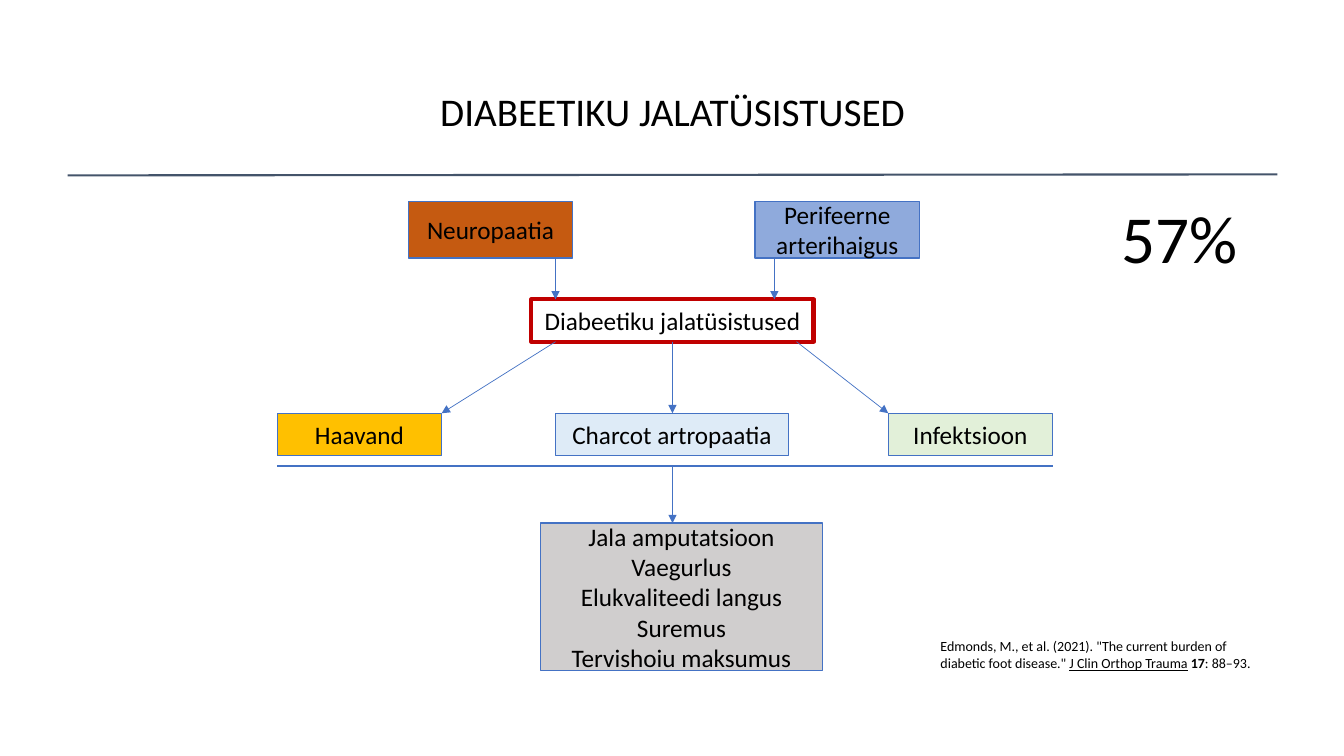
"""Build the slide on diabetic foot complications as a flow chart."""
from dataclasses import dataclass

from lxml.etree import SubElement
from pptx import Presentation
from pptx.dml.color import RGBColor
from pptx.enum.shapes import MSO_CONNECTOR as Connector, MSO_SHAPE as Preset
from pptx.enum.text import MSO_ANCHOR as Anchor, PP_ALIGN as Align
from pptx.oxml.ns import qn
from pptx.slide import Slide
from pptx.text.text import Font, TextFrame
from pptx.util import Inches, Pt

FONT = "Calibri"
COLORS = {
    "text": "000000",
    "rule": "44546A",
    "blue": "4472C4",
    "red": "C00000",
    "orange": "C55A11",
    "periwinkle": "8FAADC",
    "white": "FFFFFF",
    "green": "E2F0D9",
    "pale blue": "DEEBF7",
    "amber": "FFC000",
    "gray": "D0CECE",
}

CAUSE_TOP, CAUSE_BOTTOM = 2, 2.56
CENTER_TOP, CENTER_BOTTOM = 2.97, 3.39
EFFECT_TOP, EFFECT_BOTTOM = 4.1, 4.52
BAR_Y, OUTCOME_TOP = 4.62, 5.19
LEFT, RIGHT, MIDDLE = 2.75, 10.44, 6.67
SMALL, WIDE = 1.63, 2.8


@dataclass
class Box:
    text: str
    left: float
    top: float
    width: float
    bottom: float
    fill: str
    border: str = "blue"
    border_width: float = 1


@dataclass
class Line:
    start: tuple[float, float]
    end: tuple[float, float]
    color: str = "blue"
    width: float = 0.5
    arrow: bool = True


@dataclass
class Label:
    text: str
    left: float
    top: float
    width: float
    height: float
    size: float
    align: Align = Align.LEFT
    anchor: Anchor = Anchor.TOP
    spacing: float = 1


@dataclass
class CitationPart:
    text: str
    underline: bool = False
    bold: bool = False


BOXES = [
    Box("Neuropaatia", 4.05, CAUSE_TOP, SMALL, CAUSE_BOTTOM, "orange"),
    Box("Perifeerne arterihaigus", 7.49, CAUSE_TOP, SMALL, CAUSE_BOTTOM, "periwinkle"),
    Box("Diabeetiku jalatüsistused", 5.27, CENTER_TOP, WIDE, CENTER_BOTTOM, "white", "red", 3),
    Box("Haavand", LEFT, EFFECT_TOP, SMALL, EFFECT_BOTTOM, "amber"),
    Box("Charcot artropaatia", 5.51, EFFECT_TOP, 2.31, EFFECT_BOTTOM, "pale blue"),
    Box("Infektsioon", RIGHT - SMALL, EFFECT_TOP, SMALL, EFFECT_BOTTOM, "green"),
    Box(
        "Jala amputatsioon\nVaegurlus\nElukvaliteedi langus\nSuremus\nTervishoiu maksumus",
        5.36, OUTCOME_TOP, WIDE, 6.65, "gray",
    ),
]

LINES = [
    Line((0.67, 1.74), (12.67, 1.73), "rule", 1.5, False),
    Line((5.51, CAUSE_BOTTOM), (5.51, CENTER_TOP)),
    Line((7.68, CAUSE_BOTTOM), (7.68, CENTER_TOP)),
    Line((5.51, CENTER_BOTTOM), (LEFT + SMALL, EFFECT_TOP)),
    Line((MIDDLE, CENTER_BOTTOM), (MIDDLE, EFFECT_TOP)),
    Line((7.9, CENTER_BOTTOM), (RIGHT - SMALL, EFFECT_TOP)),
    Line((LEFT, BAR_Y), (RIGHT, BAR_Y), width=1.5, arrow=False),
    Line((MIDDLE, BAR_Y), (MIDDLE, OUTCOME_TOP)),
]

LABELS = [
    Label("DIABEETIKU JALATÜSISTUSED", 0.92, 0.4, 11.5, 1.45, 28, Align.CENTER, Anchor.MIDDLE, 0.9),
    Label("57%", 11.03, 1.9, 1.5, 0.91, 48),
]

CITATION = [
    CitationPart('Edmonds, M., et al. (2021). "The current burden of diabetic foot disease." '),
    CitationPart("J Clin Orthop Trauma", underline=True),
    CitationPart(" "),
    CitationPart("17", bold=True),
    CitationPart(": 88–93."),
]


def rgb(name: str) -> RGBColor:
    """Return the named colour."""
    return RGBColor.from_string(COLORS[name])


def format_font(font: Font, size: float) -> None:
    """Apply the slide's typeface and text colour at a size."""
    font.name = FONT
    font.size = Pt(size)
    font.color.rgb = rgb("text")


def format_text(text_frame: TextFrame, size: float, align: Align, anchor: Anchor) -> None:
    """Format every paragraph and run of a text frame."""
    text_frame.word_wrap = True
    text_frame.vertical_anchor = anchor
    for paragraph in text_frame.paragraphs:
        paragraph.alignment = align
        for run in paragraph.runs:
            format_font(run.font, size)


def draw_box(slide: Slide, box: Box) -> None:
    """Draw a filled box with centred text."""
    shape = slide.shapes.add_shape(
        Preset.RECTANGLE, Inches(box.left), Inches(box.top),
        Inches(box.width), Inches(box.bottom - box.top),
    )
    shape.shadow.inherit = False
    shape.fill.solid()
    shape.fill.fore_color.rgb = rgb(box.fill)
    shape.line.color.rgb = rgb(box.border)
    shape.line.width = Pt(box.border_width)
    shape.text_frame.text = box.text
    format_text(shape.text_frame, 18, Align.CENTER, Anchor.MIDDLE)


def draw_line(slide: Slide, line: Line) -> None:
    """Draw a straight line, with an arrowhead at its end if asked."""
    connector = slide.shapes.add_connector(
        Connector.STRAIGHT, *(Inches(value) for value in line.start + line.end)
    )
    connector.line.color.rgb = rgb(line.color)
    connector.line.width = Pt(line.width)
    properties = connector.element.spPr
    if line.arrow:
        SubElement(properties.find(qn("a:ln")), qn("a:tailEnd"), type="triangle")
    SubElement(properties, qn("a:effectLst"))


def draw_label(slide: Slide, label: Label) -> None:
    """Draw a plain text box."""
    shape = slide.shapes.add_textbox(
        Inches(label.left), Inches(label.top), Inches(label.width), Inches(label.height)
    )
    shape.text_frame.text = label.text
    shape.text_frame.paragraphs[0].line_spacing = label.spacing
    format_text(shape.text_frame, label.size, label.align, label.anchor)


def draw_citation(slide: Slide, parts: list[CitationPart]) -> None:
    """Draw the source reference with its mixed formatting."""
    shape = slide.shapes.add_textbox(Inches(9.23), Inches(6.28), Inches(3.44), Inches(0.74))
    for part in parts:
        run = shape.text_frame.paragraphs[0].add_run()
        run.text = part.text
        run.font.underline = part.underline
        run.font.bold = part.bold
    format_text(shape.text_frame, 10, Align.LEFT, Anchor.TOP)


def main() -> None:
    """Create and save the presentation."""
    presentation = Presentation()
    presentation.slide_width = Inches(13.33)
    presentation.slide_height = Inches(7.5)
    slide = presentation.slides.add_slide(presentation.slide_layouts[6])
    for box in BOXES:
        draw_box(slide, box)
    for line in LINES:
        draw_line(slide, line)
    for label in LABELS:
        draw_label(slide, label)
    draw_citation(slide, CITATION)
    presentation.save("out.pptx")


if __name__ == "__main__":
    main()
